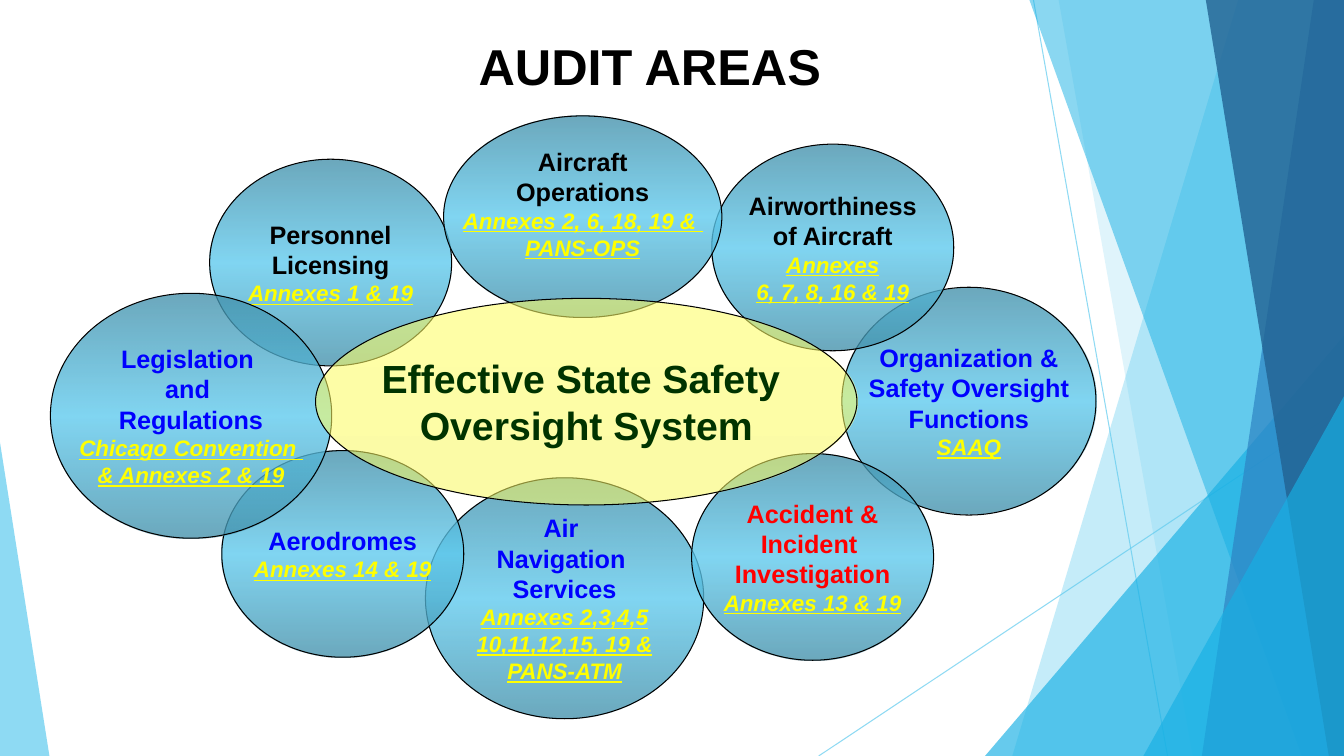
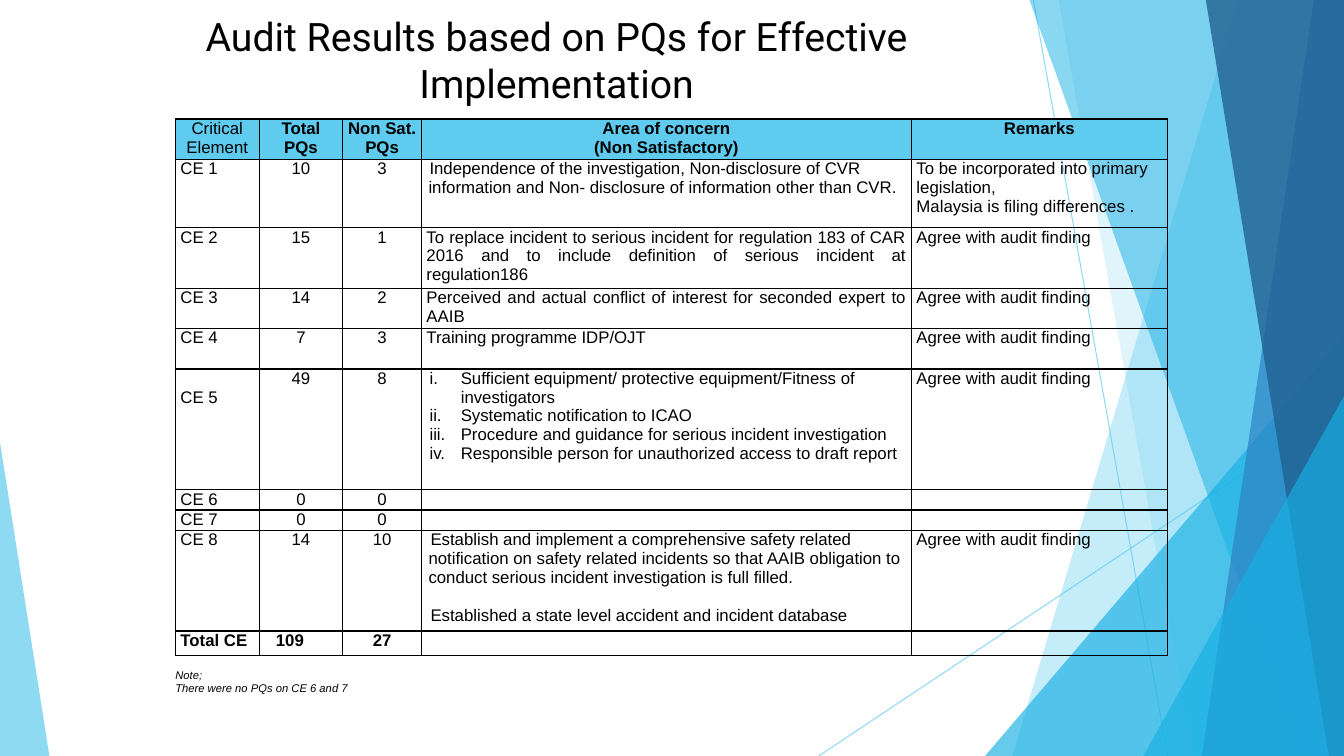
from lxml import etree
from pptx import Presentation
from pptx.dml.color import RGBColor
from pptx.enum import shapes, text
from pptx.oxml.ns import qn
from pptx.util import Pt

PX = 9144  # EMU per px, 100 px to the inch
SLIDE_W, SLIDE_H = 1333, 750
COLORS = {
    "black": "000000", "blue": "0000FF", "red": "FF0000", "yellow": "FFFF00",
    "forest": "003300", "sky": "5FCBEF", "cyan": "17B0E4", "steel": "2E83C3",
    "navy": "226292", "teal": "4491AB", "lemon": "FFFF66", "butter": "FAFA64",
}
LEFT, CENTER, JUSTIFY = text.PP_ALIGN.LEFT, text.PP_ALIGN.CENTER, text.PP_ALIGN.JUSTIFY

# Background facets: colour, opacity in percent, then geometry
RAYS = [(1025, 0, 1158, 750), (1333, 403, 812, 750)]
FACETS = [
    ("sky", 36, [(1228, 0), (1333, 0), (1333, 750), (1004, 750)]),
    ("sky", 20, [(1050, 0), (1333, 0), (1333, 750), (1183, 750)]),
    ("cyan", 66, [(1333, 333), (1333, 750), (977, 750)]),
    ("cyan", 50, [(1021, 0), (1333, 0), (1333, 750), (1291, 750)]),
    ("steel", 70, [(1303, 0), (1333, 0), (1333, 750), (1192, 750)]),
    ("navy", 80, [(1196, 0), (1333, 0), (1333, 750), (1318, 750)]),
    ("cyan", 66, [(1333, 393), (1333, 750), (1134, 750)]),
    ("sky", 70, [(0, 439), (49, 750), (0, 750)]),
]

# Audit areas: box, topic colour, topic lines, annex lines, extra space below
AREAS = [
    ((208, 158, 240, 205), "black", ["Personnel", "Licensing"], ["Annexes 1 & 19"], 0),
    ((835, 285, 252, 226), "blue", ["Organization &", "Safety Oversight", "Functions"],
     ["SAAQ"], 0),
    ((706, 143, 240, 205), "black", ["Airworthiness", "of Aircraft"],
     ["Annexes", "6, 7, 8, 16 & 19"], 0),
    ((422, 474, 276, 239), "blue", ["Air ", "Navigation ", "Services"],
     ["Annexes 2,3,4,5", "10,11,12,15, 19 &", "PANS-ATM"], 0),
    ((686, 450, 240, 205), "red", ["Accident &", "Incident ", "Investigation"],
     ["Annexes 13 & 19"], 0),
    ((440, 115, 276, 200), "black", ["Aircraft", "Operations"],
     ["Annexes 2, 6, 18, 19 & ", "PANS-OPS"], 26),
    ((220, 447, 240, 205), "blue", ["Aerodromes"], ["Annexes 14 & 19"], 0),
    ((50, 291, 279, 243), "blue", ["Legislation ", "and ", "Regulations"],
     ["Chicago Convention ", "& Annexes 2 & 19"], 0),
]
AREA_STOPS = [(0, "teal", 78), (50, "sky", 78), (100, "teal", 78)]
GOAL = (313, 296, 537, 205), "Effective State Safety \nOversight System"
GOAL_STOPS = [(0, "lemon", 58), (100, "butter", 57)]

# Audit results; each cell is a list of paragraphs
COLUMNS = [83, 83, 78, 486, 254]
ROWS = [40, 68, 60, 40, 40, 120, 20, 20, 100, 24]
AGREE = ["Agree with audit finding"]
RESULTS = [
    [["Critical", "Element"], ["Total PQs"], ["Non Sat.", "PQs"],
     ["Area of concern", "(Non Satisfactory)"], ["Remarks"]],
    [["CE 1"], ["10"], ["3"],
     ["Independence of the investigation, Non-disclosure of CVR information and "
      "Non- disclosure of information other than CVR."],
     ["To be incorporated into primary legislation,", "Malaysia is filing differences ."]],
    [["CE 2"], ["15"], ["1"],
     ["To replace incident to serious incident for regulation 183 of CAR 2016 and "
      "to include definition of serious incident at regulation186"], AGREE],
    [["CE 3"], ["14"], ["2"],
     ["Perceived and actual conflict of interest for seconded expert to AAIB"], AGREE],
    [["CE 4"], ["7"], ["3"], ["Training programme IDP/OJT"], AGREE],
    [["CE 5"], ["49"], ["8"],
     ["Sufficient equipment/ protective equipment/Fitness of investigators",
      "Systematic notification to ICAO",
      "Procedure and guidance for serious incident investigation",
      "Responsible person for unauthorized access to draft report"], AGREE],
    [["CE 6"], ["0"], ["0"], [""], [""]],
    [["CE 7"], ["0"], ["0"], [""], [""]],
    [["CE 8"], ["14"], ["10"],
     ["Establish and implement a comprehensive safety related notification on safety "
      "related incidents so that AAIB obligation to conduct serious incident "
      "investigation is full filled.",
      "Established a state level accident and incident database"], AGREE],
    [["Total CE"], ["109"], ["27"], [""], [""]],
]
CONCERN = 3
INDENTS = {1: (2, 1), 5: (34, -31), 8: (2, 2)}  # row: left margin, first line
NUMBERED_ROW = 5
PARAGRAPH_GAPS = {8: 14}  # row: points between paragraphs
TOP_INSETS = {(5, 0): 19}
RIGHT_INSETS = {(9, 1): 27}
NOTE = ["Note;", "There were no PQs on CE 6 and 7"]


def rgb(name):
    return RGBColor.from_string(COLORS[name])


def emu(*lengths):
    return [length * PX for length in lengths]


def set_alpha(element, percent):
    color = next(element.iter(qn("a:srgbClr")))
    etree.SubElement(color, qn("a:alpha"), val=str(percent * 1000))


def write(frame, lines, size, color="black", align=LEFT, font="Arial", start=0, **style):
    """Fill a text frame from paragraph number start on; return the paragraphs."""
    written = []
    for number, line in enumerate(lines, start):
        paragraph = frame.add_paragraph() if number else frame.paragraphs[0]
        paragraph.text = line
        paragraph.alignment = align
        paragraph.font.name, paragraph.font.size = font, Pt(size)
        paragraph.font.color.rgb = rgb(color)
        for name, value in style.items():
            setattr(paragraph.font, name, value)
        written.append(paragraph)
    return written


def indent(paragraph, left, first=0):
    properties = paragraph._p.get_or_add_pPr()
    properties.set("marL", str(left * PX))
    properties.set("indent", str(first * PX))


def add_title(slide, box, words, size, anchor, **style):
    title = slide.shapes.title
    title.left, title.top, title.width, title.height = emu(*box)
    frame = title.text_frame
    frame.word_wrap, frame.auto_size = True, text.MSO_AUTO_SIZE.NONE
    frame.vertical_anchor = anchor
    return write(frame, [words], size, align=CENTER, **style)[0]


def add_background(slide, layout):
    """Draw the facets as one group and hand it to the layout."""
    group = slide.shapes.add_group_shape()
    for ray in RAYS:
        line = group.shapes.add_connector(shapes.MSO_CONNECTOR.STRAIGHT, *emu(*ray))
        line.line.color.rgb, line.line.width = rgb("sky"), Pt(0.75)
        set_alpha(line._element.spPr, 70)
        etree.SubElement(line._element.spPr, qn("a:effectLst"))
    for color, opacity, points in FACETS:
        outline = group.shapes.build_freeform(*points[0], scale=PX)
        outline.add_line_segments(points[1:], close=True)
        facet = outline.convert_to_shape()
        facet.shadow.inherit = False
        facet.fill.solid()
        facet.fill.fore_color.rgb = rgb(color)
        set_alpha(facet._element.spPr, opacity)
        facet.line.fill.background()
    for number, properties in enumerate(group._element.iter(qn("p:cNvPr")), 100):
        properties.set("id", str(number))
    layout.shapes._spTree.insert(2, group._element)


def add_ellipse(slide, box, stops):
    ellipse = slide.shapes.add_shape(shapes.MSO_SHAPE.OVAL, *emu(*box))
    ellipse.shadow.inherit = False
    ellipse.line.color.rgb, ellipse.line.width = rgb("black"), Pt(0.75)
    ellipse.fill.gradient()
    ellipse.fill.gradient_angle = 270
    stop_list = next(ellipse._element.spPr.iter(qn("a:gsLst")))
    stop_list.clear()
    for position, color, opacity in stops:
        stop = etree.SubElement(stop_list, qn("a:gs"), pos=str(position * 1000))
        etree.SubElement(stop, qn("a:srgbClr"), val=COLORS[color])
        set_alpha(stop, opacity)
    frame = ellipse.text_frame
    frame.word_wrap, frame.vertical_anchor = False, text.MSO_ANCHOR.MIDDLE
    return frame


def add_borders(cell):
    properties = cell._tc.get_or_add_tcPr()
    for position, side in enumerate(("a:lnL", "a:lnR", "a:lnT", "a:lnB")):
        border = etree.Element(qn(side), w=str(Pt(1)))
        fill = etree.SubElement(border, qn("a:solidFill"))
        etree.SubElement(fill, qn("a:srgbClr"), val=COLORS["black"])
        properties.insert(position, border)


def fill_cell(cell, row, column, lines):
    cell.margin_left, cell.margin_right = emu(5, RIGHT_INSETS.get((row, column), 5))
    cell.margin_top, cell.margin_bottom = emu(TOP_INSETS.get((row, column), 0), 0)
    if row == 0:
        cell.fill.solid()
        cell.fill.fore_color.rgb = rgb("sky")
    else:
        cell.fill.background()
    add_borders(cell)

    align = LEFT
    if row == 0 or column in (1, 2):
        align = CENTER
    elif column == CONCERN and row not in INDENTS:
        align = JUSTIFY
    bold = row == len(RESULTS) - 1 or (row == 0 and column > 0)
    frame = cell.text_frame
    if column == CONCERN and row == NUMBERED_ROW:
        frame.text = "\n".join(lines)
        for paragraph in frame.paragraphs:
            etree.SubElement(paragraph._p.get_or_add_pPr(), qn("a:buAutoNum"),
                             type="romanLcPeriod")
            paragraph.font.name, paragraph.font.size = "Arial", Pt(12)
            paragraph.font.color.rgb = rgb("black")
    else:
        write(frame, lines, 12, align=align, bold=bold)
    for number, paragraph in enumerate(frame.paragraphs):
        if column == CONCERN and row in INDENTS:
            indent(paragraph, *INDENTS[row])
            if number and row in PARAGRAPH_GAPS:
                paragraph.space_before = Pt(PARAGRAPH_GAPS[row])
        if not paragraph.text:
            etree.SubElement(paragraph._p, qn("a:endParaRPr"), sz="1200")


def build_areas(slide):
    title = add_title(slide, (140, 26, 960, 77), "AUDIT AREAS", 36,
                      text.MSO_ANCHOR.MIDDLE, bold=True)
    indent(title, 49)
    for box, color, topic, annexes, space_below in AREAS:
        frame = add_ellipse(slide, box, AREA_STOPS)
        frame.margin_bottom += space_below * PX
        write(frame, topic, 18, color, CENTER, bold=True)
        write(frame, annexes, 16, "yellow", CENTER, start=len(topic),
              bold=True, italic=True, underline=True)
    box, goal = GOAL
    write(add_ellipse(slide, box, GOAL_STOPS), [goal], 28, "forest", CENTER, bold=True)


def build_results(slide):
    add_title(slide, (82, 7, 940, 89),
              "Audit Results based on PQs for Effective Implementation", 28,
              text.MSO_ANCHOR.TOP, font="Roboto")
    results = slide.shapes.add_table(
        len(ROWS), len(COLUMNS), *emu(174, 118, sum(COLUMNS), sum(ROWS))).table
    results.first_row = results.horz_banding = False
    for column, width in zip(results.columns, COLUMNS):
        column.width = width * PX
    for row, height in zip(results.rows, ROWS):
        row.height = height * PX
    for row, cells in enumerate(RESULTS):
        for column, lines in enumerate(cells):
            fill_cell(results.cell(row, column), row, column, lines)

    note = slide.shapes.add_textbox(*emu(164, 658, 665, 37)).text_frame
    note.word_wrap = True
    write(note, NOTE, 8, italic=True)


def main():
    deck = Presentation()
    deck.slide_width, deck.slide_height = emu(SLIDE_W, SLIDE_H)
    layout = deck.slide_layouts[5]  # title only
    areas, results = (deck.slides.add_slide(layout) for _ in range(2))
    add_background(areas, layout)
    build_areas(areas)
    build_results(results)
    deck.save("out.pptx")


if __name__ == "__main__":
    main()
